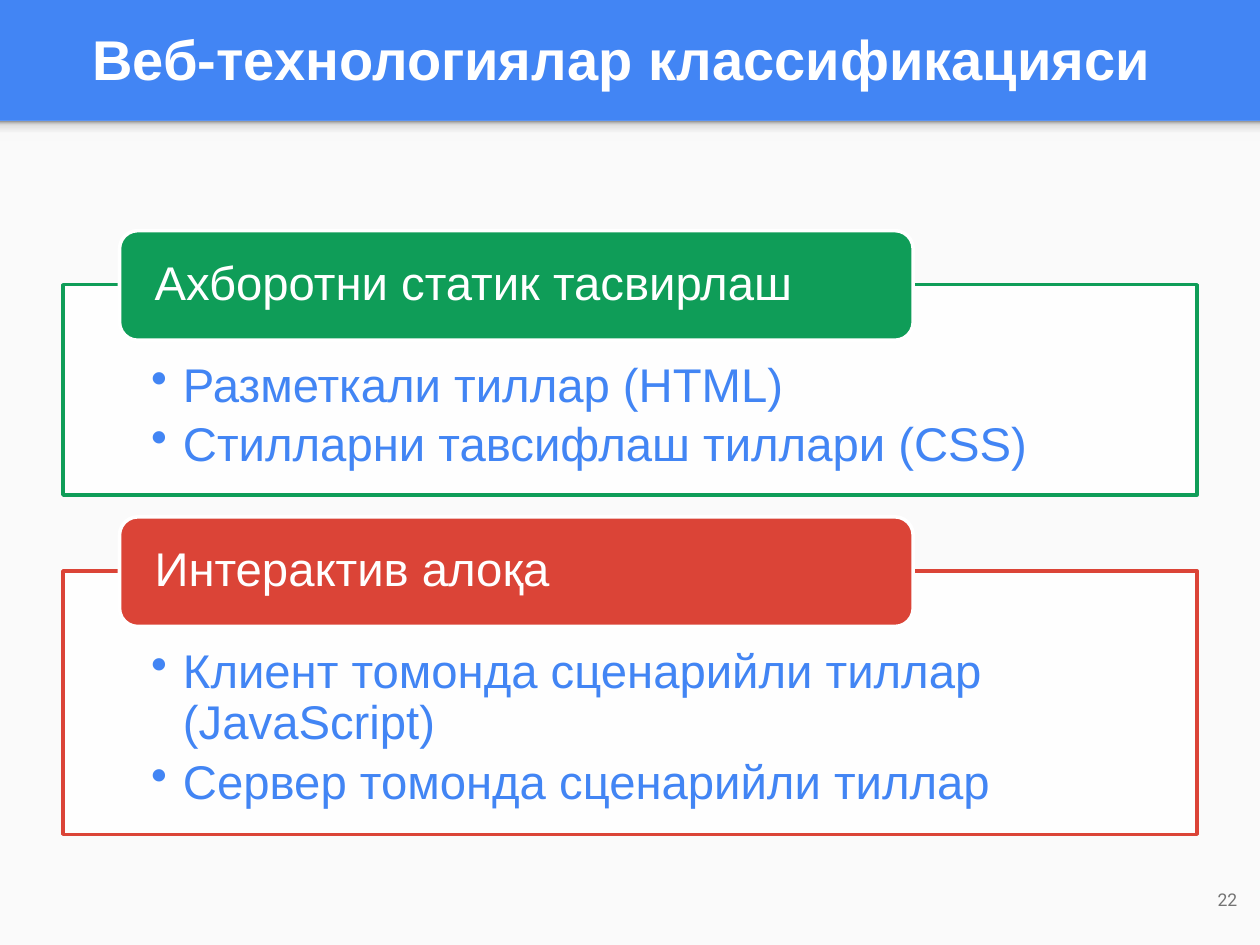
import pptx
import pptx.util
import pptx.oxml
import pptx.oxml.ns
import pptx.dml.color
import pptx.enum.shapes
import pptx.enum.text
from dataclasses import dataclass

Cm = pptx.util.Cm
Pt = pptx.util.Pt
RGB = pptx.dml.color.RGBColor.from_string
SHAPE = pptx.enum.shapes.MSO_SHAPE
ALIGN = pptx.enum.text.PP_ALIGN
ANCHOR = pptx.enum.text.MSO_ANCHOR
qn = pptx.oxml.ns.qn


@dataclass(frozen=True)
class Theme:
    blue: str = "4285F4"
    green: str = "0F9D58"
    red: str = "DB4437"
    white: str = "FFFFFF"
    paper: str = "FAFAFA"
    grey: str = "737373"
    shade: tuple = ((0, "F9F9F9"), (36, "F9F9F9"), (80, "DEDEDE"), (100, "999999"))
    font: str = "Arial"
    number_font: str = "Roboto"
    title: int = 32
    body: int = 27
    number: int = 10


theme = Theme()
prs = pptx.Presentation()
prs.slide_width, prs.slide_height = Cm(25.4), Cm(19.05)
s = prs.slides.add_slide(prs.slide_layouts[6])
s.background.fill.solid()
s.background.fill.fore_color.rgb = RGB(theme.blue)


def add_box(kind, left, top, width, height, fill=None, line=None):
    sp = s.shapes.add_shape(kind, Cm(left), Cm(top), Cm(width), Cm(height))
    sp.shadow.inherit = False
    if fill:
        sp.fill.solid()
        sp.fill.fore_color.rgb = RGB(fill)
    else:
        sp.fill.background()
    if line:
        sp.line.color.rgb = RGB(line)
        sp.line.width = Pt(2)
    else:
        sp.line.fill.background()
    return sp


def add_text(sp, lines, size, color, margins, align=ALIGN.LEFT, anchor=ANCHOR.MIDDLE,
             font=theme.font, bold=False, bullets=False, spacing=1.0):
    tf = sp.text_frame
    tf.word_wrap = True
    tf.vertical_anchor = anchor
    tf.margin_left, tf.margin_top, tf.margin_right, tf.margin_bottom = map(Cm, margins)
    for i, line in enumerate(lines):
        p = tf.paragraphs[0] if i == 0 else tf.add_paragraph()
        p.alignment = align
        p.line_spacing = spacing
        if bullets:
            p.space_after = Pt(4.7)
            pPr = p._p.get_or_add_pPr()
            pPr.set("marL", str(Cm(0.64)))
            pPr.set("indent", str(-Cm(0.64)))
            bu = pptx.oxml.parse_xml(f'<a:buChar {pptx.oxml.ns.nsdecls("a")} char="•"/>')
            pPr.append(bu)
        r = p.add_run()
        r.text = line
        r.font.name = font
        r.font.size = Pt(size)
        r.font.bold = bold
        r.font.color.rgb = RGB(color)


add_box(SHAPE.RECTANGLE, 0, 2.44, 25.4, 16.61, theme.paper)

shade = add_box(SHAPE.RECTANGLE, 0, 2.44, 25.4, 0.4)
stops = "".join(
    f'<a:gs pos="{pos * 1000}"><a:srgbClr val="{color}"/></a:gs>' for pos, color in theme.shade
)
grad = pptx.oxml.parse_xml(
    f'<a:gradFill {pptx.oxml.ns.nsdecls("a")} rotWithShape="1"><a:gsLst>{stops}</a:gsLst>'
    '<a:lin ang="16200000" scaled="0"/></a:gradFill>'
)
spPr = shade._element.spPr
spPr.replace(spPr.find(qn("a:noFill")), grad)

title = s.shapes.add_textbox(Cm(0.28), Cm(0.05), Cm(24.51), Cm(2.24))
add_text(title, ["Веб-технологиялар классификацияси"], theme.title, theme.white,
         (0.25, 0.25, 0.25, 0.25), align=ALIGN.CENTER, bold=True)

groups = [
    ("Ахборотни статик тасвирлаш", theme.green, 5.74, 4.24,
     ["Разметкали тиллар (HTML)", "Стилларни тавсифлаш тиллари (CSS)"]),
    ("Интерактив алоқа", theme.red, 11.51, 5.31,
     ["Клиент томонда сценарийли тиллар (JavaScript)", "Сервер томонда сценарийли тиллар"]),
]
for heading, color, top, height, items in groups:
    panel = add_box(SHAPE.RECTANGLE, 1.27, top, 22.86, height, theme.white, color)
    clr = panel._element.spPr.find(qn("a:solidFill"))[0]
    clr.append(pptx.oxml.parse_xml(f'<a:alpha {pptx.oxml.ns.nsdecls("a")} val="90000"/>'))
    add_text(panel, items, theme.body, theme.blue, (1.78, 1.55, 1.78, 0.53),
             anchor=ANCHOR.TOP, bullets=True, spacing=0.9)
    label = add_box(SHAPE.ROUNDED_RECTANGLE, 2.41, top - 1.09, 16, 2.21, color, theme.white)
    add_text(label, [heading], theme.body, theme.white, (0.6, 0, 0.6, 0), spacing=0.9)

number = s.shapes.add_textbox(Cm(23.67), Cm(17.4), Cm(1.52), Cm(1.45))
add_text(number, ["22"], theme.number, theme.grey, (0.25, 0.25, 0.25, 0.25),
         align=ALIGN.RIGHT, font=theme.number_font)

prs.save("out.pptx")
